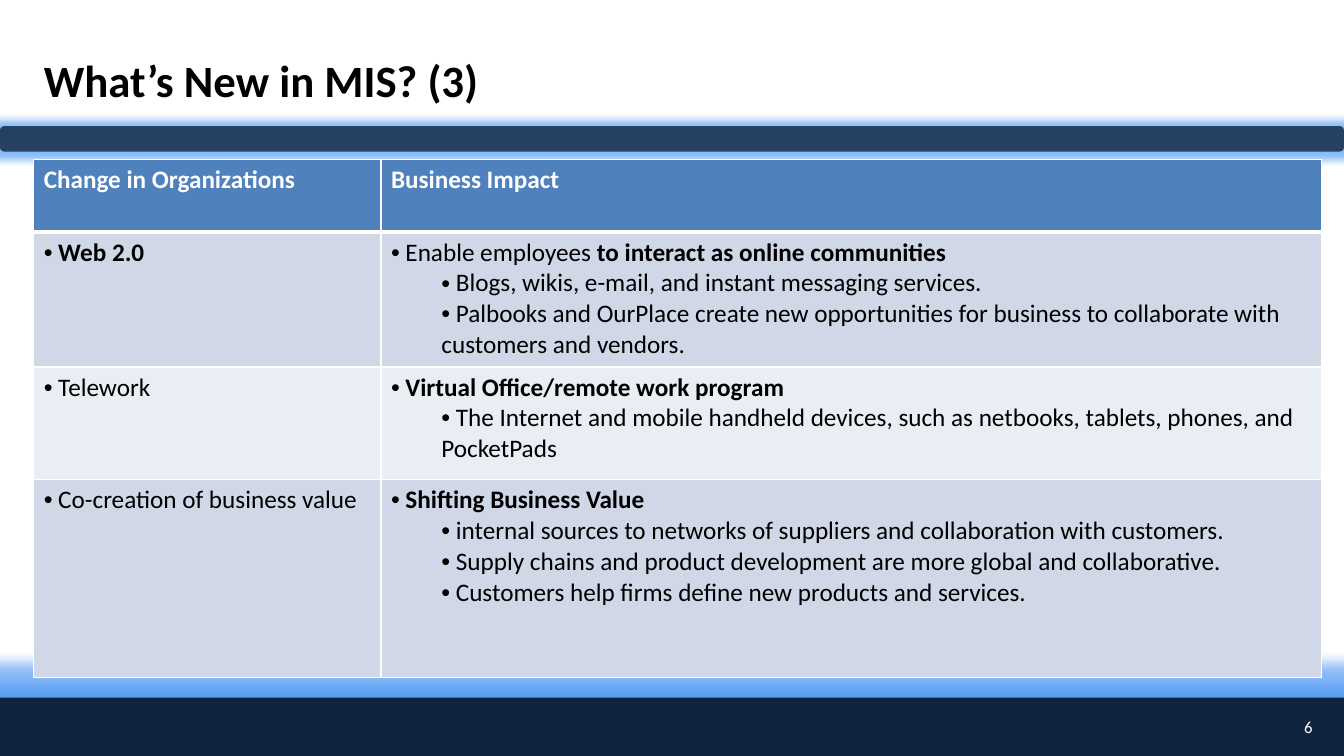
from lxml import etree
from pptx import Presentation
from pptx.dml.color import RGBColor
from pptx.enum.shapes import MSO_SHAPE
from pptx.enum.text import MSO_ANCHOR, PP_ALIGN
from pptx.oxml.ns import qn
from pptx.util import Cm, Pt

RECTANGLE = MSO_SHAPE.RECTANGLE
ROUNDED = MSO_SHAPE.ROUNDED_RECTANGLE
MIDDLE = MSO_ANCHOR.MIDDLE
LEFT, RIGHT = PP_ALIGN.LEFT, PP_ALIGN.RIGHT
TITLE_ONLY = 5

FONT = "Calibri"
BLACK, WHITE = "000000", "FFFFFF"
NAVY, BAR_BLUE, GLOW_BLUE = "0F243E", "254061", "3C8CF0"
HEADER_FILL = "4F81BD"
BAND_FILLS = ("D0D8E8", "E9EDF4")

SLIDE_WIDTH, SLIDE_HEIGHT = 33.87, 19.05
MARGIN = 0.85
COLUMN_WIDTHS = (8.75, 23.7)
ROW_HEIGHTS = (1.83, 3.4, 2.84, 4.99)

HEADERS = ("Change in Organizations", "Business Impact")
# Each cell lists paragraphs as (level, [(text, bold), ...]).
CHANGES = [
    (
        [(0, [(" Web 2.0", True)])],
        [
            (0, [(" Enable employees ", False), ("to interact as online communities", True)]),
            (1, [(" Blogs, wikis, e-mail, and instant messaging services.", False)]),
            (1, [(" Palbooks and OurPlace create new opportunities for business "
                  "to collaborate with customers and vendors.", False)]),
        ],
    ),
    (
        [(0, [(" Telework", False)])],
        [
            (0, [(" Virtual Office/remote work program", True)]),
            (1, [(" The Internet and mobile handheld devices, such as netbooks, "
                  "tablets, phones, and PocketPads", False)]),
        ],
    ),
    (
        [(0, [(" Co-creation of business value", False)])],
        [
            (0, [(" Shifting Business Value", True)]),
            (1, [(" internal sources to networks of suppliers and "
                  "collaboration with customers.", False)]),
            (1, [(" Supply chains and product development are more global "
                  "and collaborative.", False)]),
            (1, [(" Customers help firms define new products and services.", False)]),
        ],
    ),
]


def rgb(color):
    return RGBColor.from_string(color)


def format_run(run, size, color, bold=False):
    run.font.name = FONT
    run.font.size = Pt(size)
    run.font.bold = bold
    run.font.color.rgb = rgb(color)


def add_color(parent, color):
    return etree.SubElement(parent, qn("a:srgbClr"), val=color)


def add_bar(slide, kind, top, height, color, glow_points):
    """Add a full-width bar with a soft blue glow."""
    bar = slide.shapes.add_shape(kind, 0, Cm(top), Cm(SLIDE_WIDTH), Cm(height))
    bar.shadow.inherit = False
    bar.fill.solid()
    bar.fill.fore_color.rgb = rgb(color)
    bar.line.fill.background()
    effects = bar.element.spPr.find(qn("a:effectLst"))
    glow = etree.SubElement(effects, qn("a:glow"), rad=str(Pt(glow_points)))
    etree.SubElement(add_color(glow, GLOW_BLUE), qn("a:alpha"), val="60000")


def add_title(slide, text):
    title = slide.shapes.title
    title.left, title.top = Cm(MARGIN), Cm(1.06)
    title.width, title.height = Cm(29.37), Cm(1.9)
    frame = title.text_frame
    frame.text = text
    frame.vertical_anchor = MIDDLE
    paragraph = frame.paragraphs[0]
    paragraph.alignment = LEFT
    format_run(paragraph.runs[0], 32, BLACK, True)


def add_slide_number(slide, number):
    box = slide.shapes.add_textbox(Cm(31.9), Cm(17.78), Cm(1.43), Cm(1.06))
    frame = box.text_frame
    frame.word_wrap = True
    frame.vertical_anchor = MIDDLE
    frame.text = number
    paragraph = frame.paragraphs[0]
    paragraph.alignment = RIGHT
    format_run(paragraph.runs[0], 12, WHITE)


def style_cell(cell, fill, top_width=1, bottom_width=1):
    properties = cell._tc.get_or_add_tcPr()
    widths = {"a:lnL": 1, "a:lnR": 1, "a:lnT": top_width, "a:lnB": bottom_width}
    for tag, width in widths.items():
        line = etree.SubElement(properties, qn(tag), w=str(Pt(width)))
        add_color(etree.SubElement(line, qn("a:solidFill")), WHITE)
    cell.fill.solid()
    cell.fill.fore_color.rgb = rgb(fill)


def add_bullet(paragraph, level):
    paragraph.level = level
    properties = paragraph._p.get_or_add_pPr()
    properties.set("marL", str(Cm(1.27 * level)))
    properties.set("indent", "0")
    etree.SubElement(properties, qn("a:buFont"), typeface="Arial")
    etree.SubElement(properties, qn("a:buChar"), char="•")


def fill_bullets(cell, items):
    frame = cell.text_frame
    for index, (level, parts) in enumerate(items):
        paragraph = frame.add_paragraph() if index else frame.paragraphs[0]
        add_bullet(paragraph, level)
        for text, bold in parts:
            run = paragraph.add_run()
            run.text = text
            format_run(run, 18, BLACK, bold)


def add_changes_table(slide):
    table = slide.shapes.add_table(
        len(ROW_HEIGHTS), len(COLUMN_WIDTHS), Cm(MARGIN), Cm(4.02),
        Cm(sum(COLUMN_WIDTHS)), Cm(sum(ROW_HEIGHTS)),
    ).table
    for column, width in zip(table.columns, COLUMN_WIDTHS):
        column.width = Cm(width)
    for row, height in zip(table.rows, ROW_HEIGHTS):
        row.height = Cm(height)

    for column, header in enumerate(HEADERS):
        cell = table.cell(0, column)
        cell.text_frame.text = header
        format_run(cell.text_frame.paragraphs[0].runs[0], 18, WHITE, True)
        style_cell(cell, HEADER_FILL, bottom_width=3)

    for row, change in enumerate(CHANGES, start=1):
        for column, items in enumerate(change):
            cell = table.cell(row, column)
            fill_bullets(cell, items)
            style_cell(cell, BAND_FILLS[(row - 1) % 2], top_width=3 if row == 1 else 1)


def main():
    presentation = Presentation()
    presentation.slide_width = Cm(SLIDE_WIDTH)
    presentation.slide_height = Cm(SLIDE_HEIGHT)
    slide = presentation.slides.add_slide(presentation.slide_layouts[TITLE_ONLY])
    add_bar(slide, RECTANGLE, 17.58, 1.47, NAVY, 18)
    add_bar(slide, ROUNDED, 3.18, 0.64, BAR_BLUE, 10)
    add_changes_table(slide)
    add_title(slide, "What’s New in MIS? (3)")
    add_slide_number(slide, "6")
    presentation.save("out.pptx")


if __name__ == "__main__":
    main()
